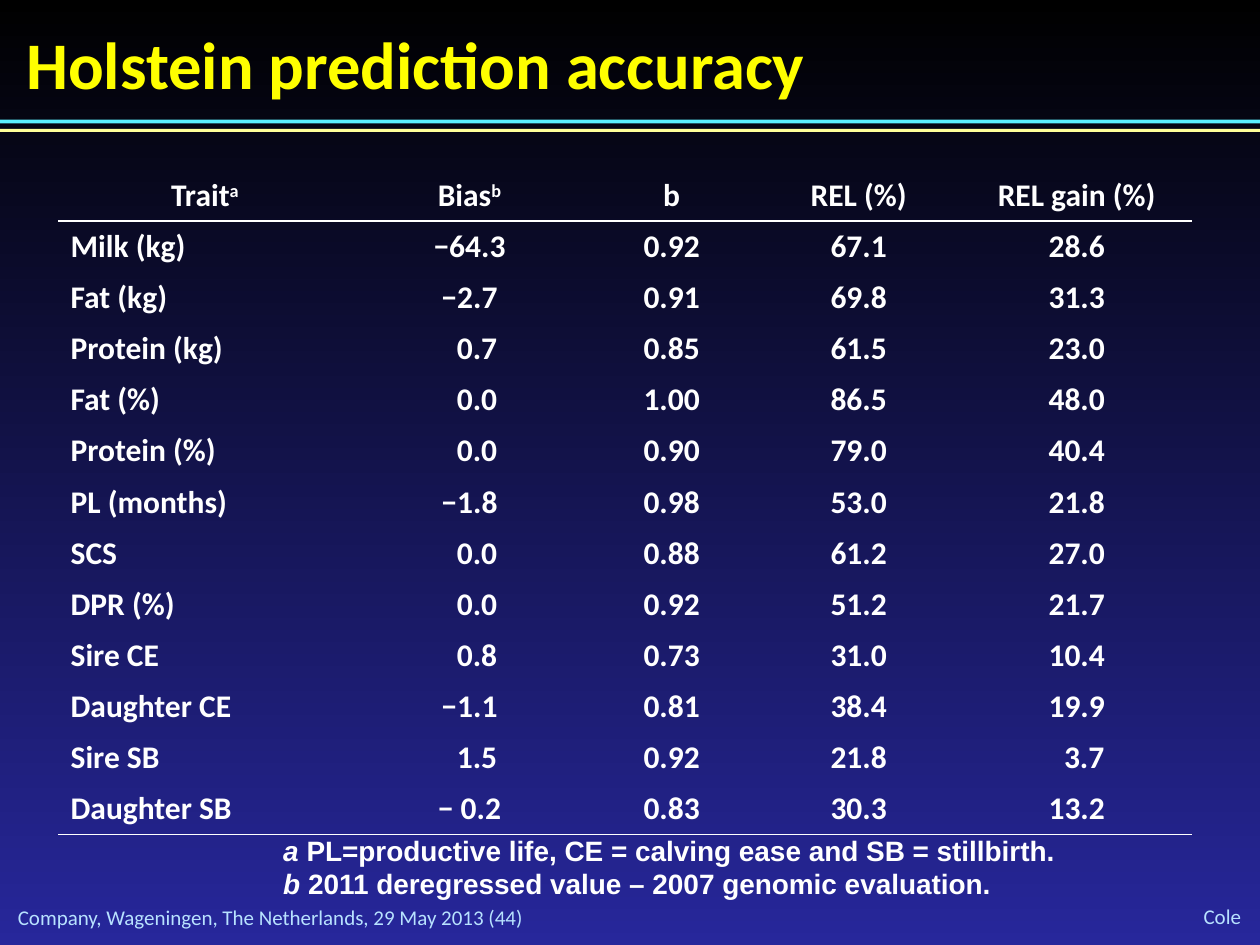
from lxml import etree
from pptx import Presentation
from pptx import util as u
from pptx.dml.color import RGBColor
from pptx.enum import shapes, text
from pptx.oxml import ns

WHITE = "FFFFFF"
L, C, R = text.PP_ALIGN.LEFT, text.PP_ALIGN.CENTER, text.PP_ALIGN.RIGHT
TOP, MID, BOTTOM = text.MSO_ANCHOR.TOP, text.MSO_ANCHOR.MIDDLE, text.MSO_ANCHOR.BOTTOM


def rgb(h):
    return RGBColor.from_string(h)


def add_run(p, words, size, color, bold=False, italic=False, font="Calibri"):
    r = p.add_run()
    r.text = words
    r.font.name, r.font.size = font, u.Pt(size)
    r.font.bold, r.font.italic = bold, italic
    r.font.color.rgb = rgb(color)
    return r


prs = Presentation()
prs.slide_width, prs.slide_height = u.Cm(25.4), u.Cm(19.05)
s = prs.slides.add_slide(prs.slide_layouts[6])

bg = s.background.fill
bg.gradient()
bg.gradient_angle = 270
for stop, color in zip(bg.gradient_stops, ["000000", "27279B"]):
    stop.color.rgb = rgb(color)

for top, height, color in [(2.41, 0.08, "5BEFFF"), (2.6, 0.06, "FFFF99")]:
    sp = s.shapes.add_shape(shapes.MSO_SHAPE.RECTANGLE, 0, u.Cm(top), prs.slide_width, u.Cm(height))
    sp.shadow.inherit = False
    sp.fill.solid()
    sp.fill.fore_color.rgb = rgb(color)
    sp.line.fill.background()

labels = [
    ("Holstein prediction accuracy", (0.53, 0.46, 22.86, 1.52), 38, "FFFF00", True, L, TOP),
    ("Company, Wageningen, The Netherlands, 29 May 2013 (44)",
     (0.36, 18.24, 14.68, 0.51), 12, "B8E2FF", False, L, MID),
    ("Cole", (22.15, 18.21, 2.87, 0.53), 12, "B8E2FF", False, R, MID),
]
for words, box, size, color, bold, align, anchor in labels:
    tf = s.shapes.add_textbox(*map(u.Cm, box)).text_frame
    tf.word_wrap = True
    tf.vertical_anchor = anchor
    tf.margin_left = tf.margin_right = tf.margin_top = tf.margin_bottom = 0
    p = tf.paragraphs[0]
    p.alignment = align
    add_run(p, words, size, color, bold)

header = [("Trait", "a"), ("Bias", "b"), ("b", ""), ("REL (%)", ""), ("REL gain (%)", "")]
rows = [
    ("Milk (kg)", "−64.3", "0.92", "67.1", "28.6"),
    ("Fat (kg)", "−2.7", "0.91", "69.8", "31.3"),
    ("Protein (kg)", "0.7", "0.85", "61.5", "23.0"),
    ("Fat (%)", "0.0", "1.00", "86.5", "48.0"),
    ("Protein (%)", "0.0", "0.90", "79.0", "40.4"),
    ("PL (months)", "−1.8", "0.98", "53.0", "21.8"),
    ("SCS", "0.0", "0.88", "61.2", "27.0"),
    ("DPR (%)", "0.0", "0.92", "51.2", "21.7"),
    ("Sire CE", "0.8", "0.73", "31.0", "10.4"),
    ("Daughter CE", "−1.1", "0.81", "38.4", "19.9"),
    ("Sire SB", "1.5", "0.92", "21.8", "3.7"),
    ("Daughter SB", "− 0.2", "0.83", "30.3", "13.2"),
]
widths = [5.92, 4.75, 3.4, 4.14, 4.65]
row_height = 1.03
grid = [header] + [[(v, "") for v in row] for row in rows]
gf = s.shapes.add_table(len(grid), len(widths), u.Cm(1.17), u.Cm(3.43),
                        u.Cm(sum(widths)), u.Cm(row_height * len(grid)))
tb = gf.table
tb.first_row = tb.horz_banding = False
tb._tbl.tblPr.find(ns.qn("a:tableStyleId")).text = "{2D5ABB26-0587-4C30-8999-92F81FD0307C}"
for col, width in zip(tb.columns, widths):
    col.width = u.Cm(width)

for i, row in enumerate(grid):
    tb.rows[i].height = u.Cm(row_height)
    for j, (words, mark) in enumerate(row):
        cell = tb.cell(i, j)
        cell.fill.background()
        cell.vertical_anchor = BOTTOM if i == 0 else TOP
        p = cell.text_frame.paragraphs[0]
        p.alignment = L if i and j == 0 else C
        if i and j and len(words) == 3:
            p._p.get_or_add_pPr().set("marL", str(u.Cm(0.3)))
        add_run(p, words, 18, WHITE, True)
        if mark:
            r = add_run(p, mark, 18, WHITE, True)
            r._r.get_or_add_rPr().set("baseline", "30000")
        if i in (0, len(grid) - 1):
            ln = etree.Element(ns.qn("a:lnB"), w=str(u.Pt(1)))
            fill = etree.SubElement(ln, ns.qn("a:solidFill"))
            etree.SubElement(fill, ns.qn("a:srgbClr"), val=WHITE)
            cell._tc.get_or_add_tcPr().insert(0, ln)

tf = s.shapes.add_textbox(u.Cm(5.46), u.Cm(16.66), u.Cm(16.5), u.Cm(1.63)).text_frame
tf.word_wrap = True
tf.vertical_anchor = MID
notes = [
    ("a ", "PL=productive life, CE = calving ease and SB = stillbirth."),
    ("b ", "2011 deregressed value – 2007 genomic evaluation."),
]
for k, (mark, note) in enumerate(notes):
    p = tf.add_paragraph() if k else tf.paragraphs[0]
    add_run(p, mark, 16, WHITE, True, True, "Arial")
    add_run(p, note, 16, WHITE, True, False, "Arial")

prs.save("out.pptx")
